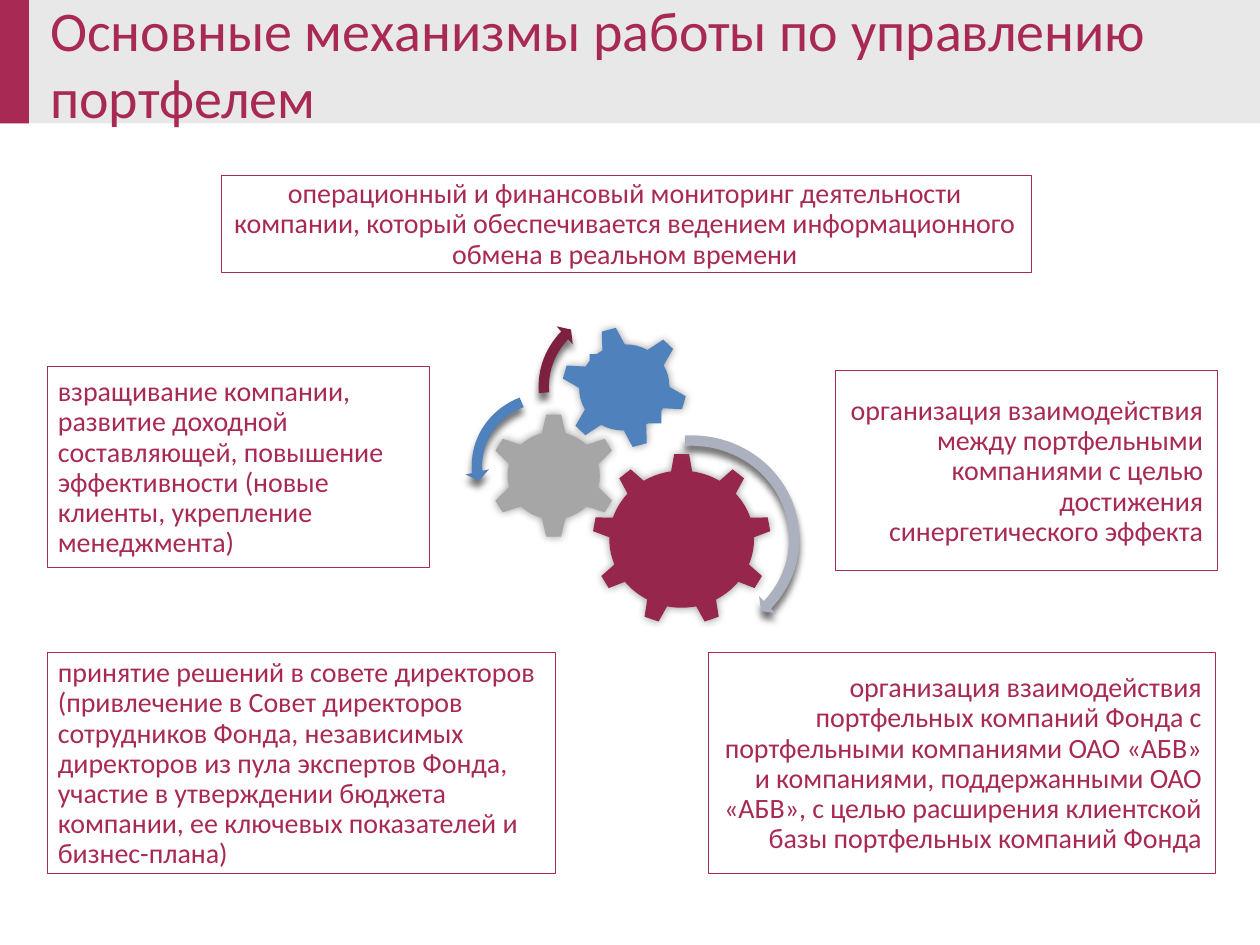
import pptx
import pptx.dml.color
import pptx.enum.shapes
import pptx.enum.text
import pptx.oxml
import pptx.util
from pptx.util import Inches

SHAPE = pptx.enum.shapes.MSO_SHAPE
ALIGN = pptx.enum.text.PP_ALIGN
MIDDLE = pptx.enum.text.MSO_ANCHOR.MIDDLE
COLORS = {
    "crimson": "A82A54", "band": "E8E8E8", "white": "FFFFFF",
    "gear_red": "97264C", "gear_gray": "A6A6A6", "gear_blue": "4F81BD",
    "arrow_gray": "ACB1BF", "arrow_dark": "7E203F",
    "gear_shadow": "000000", "arrow_shadow": "747474",
}
GEAR_SHADOW = ("gear_shadow", 40, 5, 0, 0)
ARROW_SHADOW = ("arrow_shadow", 100, 4, 4, 90)


def rgb(name):
    return pptx.dml.color.RGBColor.from_string(COLORS[name])


def add_filled(slide, kind, left, top, width, height, color):
    shape = slide.shapes.add_shape(
        kind, Inches(left), Inches(top), Inches(width), Inches(height))
    shape.shadow.inherit = False
    shape.fill.solid()
    shape.fill.fore_color.rgb = rgb(color)
    shape.line.fill.background()
    return shape


def add_outer_shadow(shape, color, alpha, blur, distance, direction):
    """Fill the shape's empty effect list; lengths in points, angle in degrees."""
    effects = shape.element.spPr.find(pptx.oxml.ns.qn("a:effectLst"))
    effects.append(pptx.oxml.parse_xml(
        f'<a:outerShdw {pptx.oxml.ns.nsdecls("a")} blurRad="{blur * 12700}" '
        f'dist="{distance * 12700}" dir="{direction * 60000}" rotWithShape="0">'
        f'<a:srgbClr val="{COLORS[color]}"><a:alpha val="{alpha * 1000}"/>'
        '</a:srgbClr></a:outerShdw>'))


def write(frame, text, size, align):
    frame.word_wrap = True
    frame.vertical_anchor = MIDDLE
    paragraph = frame.paragraphs[0]
    paragraph.alignment = align
    run = paragraph.add_run()
    run.text = text
    run.font.name = "Calibri"
    run.font.size = pptx.util.Pt(size)
    run.font.color.rgb = rgb("crimson")
    return paragraph


def add_header(slide, left, top, width, height, text):
    add_filled(slide, SHAPE.RECTANGLE, left, top, width, height, "band")
    add_filled(slide, SHAPE.RECTANGLE, left - 0.01, top, 0.24, height, "crimson")
    title = slide.shapes.add_textbox(
        Inches(left + 0.3), Inches(top + 0.01), Inches(9.43), Inches(height - 0.01))
    write(title.text_frame, text, 32, ALIGN.LEFT)


def add_mechanism(slide, left, top, width, height, align, text):
    box = add_filled(slide, SHAPE.RECTANGLE, left, top, width, height, "white")
    box.line.color.rgb = rgb("crimson")
    box.line.width = pptx.util.Pt(0.5)
    frame = box.text_frame
    frame.margin_left = frame.margin_top = Inches(0.08)
    frame.margin_right, frame.margin_bottom = Inches(0.11), Inches(0.06)
    write(frame, text, 16, align).line_spacing = 0.9


def add_gears(slide, left, top):
    """Three meshed gears with their turning arrows, offset from the corner."""
    gears = [  # kind, x, y, width, height, rotation, colour, hub box
        (SHAPE.GEAR_9, 1.01, 1.22, 1.42, 1.36, 0, "gear_red", None),
        (SHAPE.GEAR_6, 0.19, 0.9, 1.03, 0.99, 0, "gear_gray", (0.45, 1.15, 0.51, 0.49)),
        (SHAPE.GEAR_6, 0.76, 0.21, 1.01, 0.97, 345, "gear_blue", (0.99, 0.43, 0.57, 0.55)),
    ]
    for kind, x, y, width, height, rotation, color, hub in gears:
        gear = add_filled(slide, kind, left + x, top + y, width, height, color)
        gear.rotation = rotation
        add_outer_shadow(gear, *GEAR_SHADOW)
        if hub:
            x, y, width, height = hub
            add_filled(slide, SHAPE.RECTANGLE, left + x, top + y, width, height, color)

    arrows = [  # kind, x, y, width, height, colour, adjustments
        (SHAPE.CIRCULAR_ARROW, 0.89, 1.02, 1.82, 1.75, "arrow_gray",
         (0.047, 2.99, 24.693, 159.663, 0.055)),
        (SHAPE.LEFT_CIRCULAR_ARROW, 0, 0.68, 1.32, 1.27, "gear_blue",
         (0.065, 4.3, 104.891, 148.378, 0.075)),
        (SHAPE.CIRCULAR_ARROW, 0.53, 0, 1.42, 1.37, "arrow_dark",
         (0.06, 3.941, 133.138, 105.082, 0.07)),
    ]
    for kind, x, y, width, height, color, adjustments in arrows:
        arrow = add_filled(slide, kind, left + x, top + y, width, height, color)
        for index, value in enumerate(adjustments):
            arrow.adjustments[index] = value
        add_outer_shadow(arrow, *ARROW_SHADOW)


MECHANISMS = [
    (5.62, 5.18, 4.03, 1.75, ALIGN.RIGHT,
     "организация взаимодействия портфельных компаний Фонда с портфельными "
     "компаниями ОАО «АБВ» и компаниями, поддержанными ОАО «АБВ», с целью "
     "расширения клиентской базы портфельных компаний Фонда"),
    (6.63, 2.94, 3.03, 1.59, ALIGN.RIGHT,
     "организация взаимодействия между портфельными компаниями с целью "
     "достижения синергетического эффекта"),
    (1.76, 1.39, 6.43, 0.77, ALIGN.CENTER,
     "операционный и финансовый мониторинг деятельности компании, который "
     "обеспечивается ведением информационного обмена в реальном времени"),
    (0.38, 5.18, 4.03, 1.75, ALIGN.LEFT,
     "принятие решений в совете директоров (привлечение в Совет директоров "
     "сотрудников Фонда, независимых директоров из пула экспертов Фонда, "
     "участие в утверждении бюджета компании, ее ключевых показателей и "
     "бизнес-плана)"),
    (0.38, 2.91, 3.03, 1.59, ALIGN.LEFT,
     "взращивание компании, развитие доходной составляющей, повышение "
     "эффективности (новые клиенты, укрепление менеджмента)"),
]


def main():
    deck = pptx.Presentation()
    deck.slide_width, deck.slide_height = Inches(10), Inches(7.5)
    slide = deck.slides.add_slide(deck.slide_layouts[6])
    add_header(slide, 0, 0, 10, 0.98,
               "Основные механизмы работы по управлению портфелем")
    for mechanism in MECHANISMS:
        add_mechanism(slide, *mechanism)
    add_gears(slide, 3.69, 2.38)
    deck.save("out.pptx")


if __name__ == "__main__":
    main()
